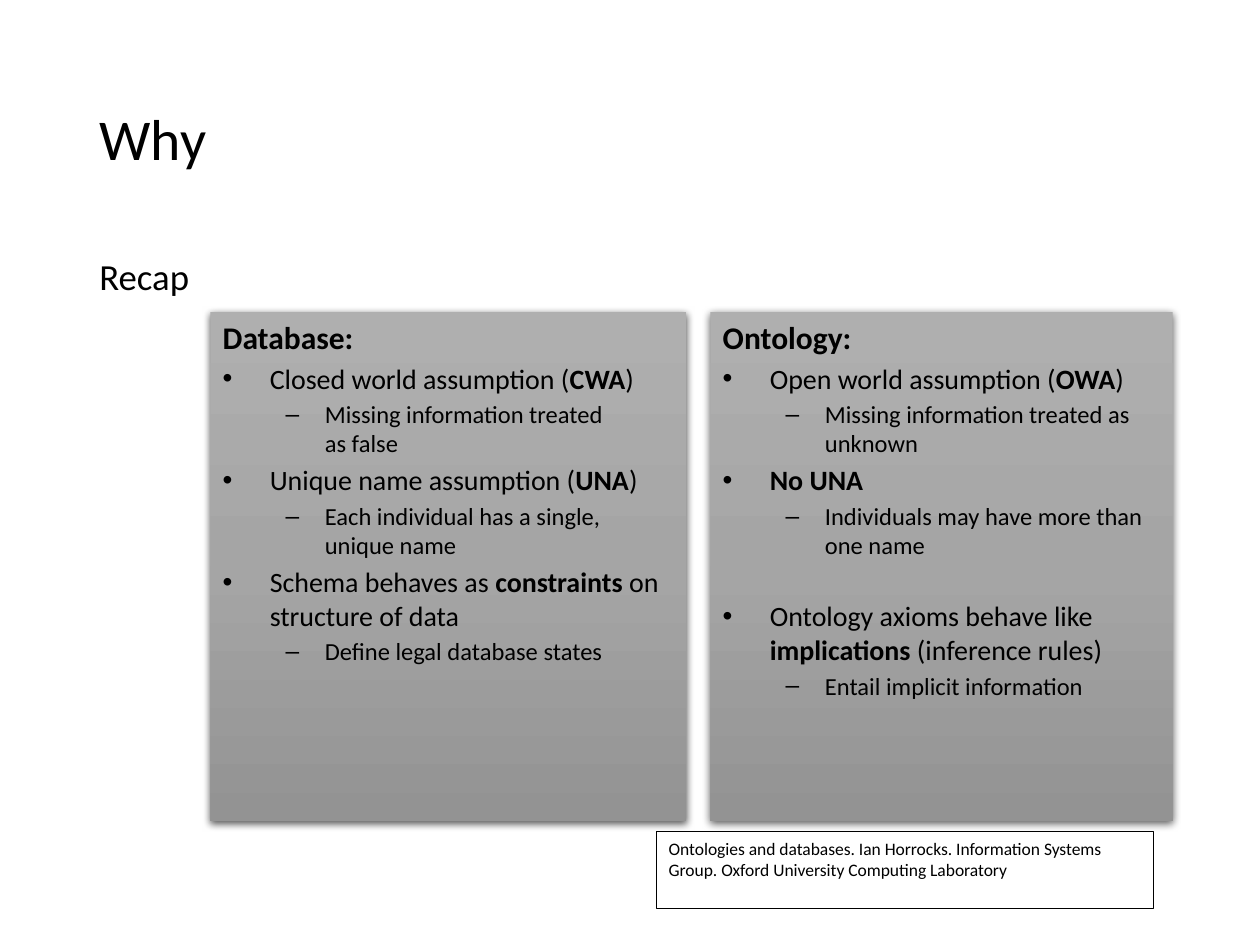
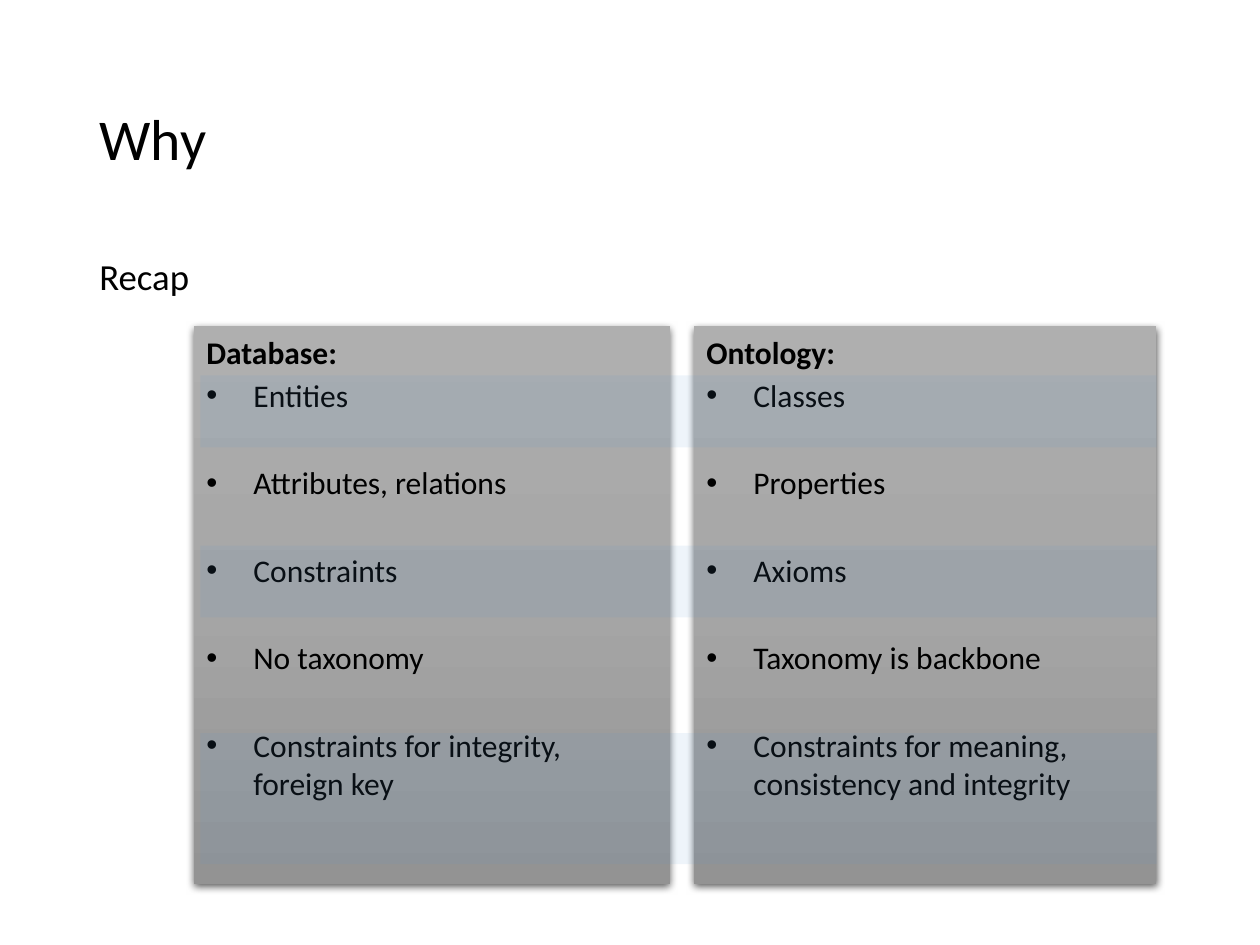
import copy

import pptx
import pptx.dml.color
import pptx.enum.dml
import pptx.enum.shapes
import pptx.enum.text
import pptx.oxml
import pptx.oxml.ns
import pptx.util
from pptx.util import Cm, Pt

COLORS = {
    "text": "000000",
    "paper": "FFFFFF",
    "panel_top": "AFAFAF",
    "panel_middle": "A5A5A5",
    "panel_bottom": "939393",
    "stripe": "5B9BD5",
}
FONT = "Calibri"
TITLE_BOX = (1.75, 1.02, 21.89, 3.68)
BODY_BOX = (1.75, 5.08, 21.89, 12.09)
PANEL_WIDTHS = (9.6, 9.32)
PANEL_GAP = 0.48
SPACING_SHARE = 0.18
LEVELS = {
    "heading": {"size": 18, "margin": 0.95, "indent": -0.95, "bullet": None, "level": 0},
    "point": {"size": 16, "margin": 0.95, "indent": -0.95, "bullet": "•", "level": 0},
    "detail": {"size": 14, "margin": 2.06, "indent": -0.79, "bullet": "–", "level": 1},
}
ASSUMPTIONS = (
    [
        ("heading", "*Database:*", 0),
        ("point", "Closed world assumption (*CWA*)", 0),
        ("detail", "Missing information treated \nas false", 0),
        ("point", "Unique name assumption (*UNA*)", 0),
        ("detail", "Each individual has a single, unique name", 0),
        ("point", "Schema behaves as *constraints* on structure of data", 0),
        ("detail", "Define legal database states", 0),
    ],
    [
        ("heading", "*Ontology:*", 0),
        ("point", "Open world assumption (*OWA*)", 0),
        ("detail", "Missing information treated as unknown", 0),
        ("point", "*No UNA*", 0),
        ("detail", "Individuals may have more than one name", 0),
        ("point", "Ontology axioms behave like *implications* (inference rules)", 19.5),
        ("detail", "Entail implicit information", 0),
    ],
)
COUNTERPARTS = {
    "Database:": ["Entities", "Attributes, relations", "Constraints", "No taxonomy",
                  "Constraints for integrity, foreign key"],
    "Ontology:": ["Classes", "Properties", "Axioms", "Taxonomy is backbone",
                  "Constraints for meaning, consistency and integrity"],
}
SOURCE_NOTE = ("Ontologies and databases. Ian Horrocks. Information Systems Group. "
               "Oxford University Computing Laboratory")
STRIPES = ((7.57, 1.45), (11, 1.45), (14.78, 2.64))


def color(name):
    return pptx.dml.color.RGBColor.from_string(COLORS[name])


def append_xml(parent, tag, **attributes):
    child = pptx.oxml.parse_xml(f'<a:{tag} {pptx.oxml.ns.nsdecls("a")}/>')
    for name, value in attributes.items():
        child.set(name, str(value))
    parent.append(child)
    return child


def format_paragraph(paragraph, **values):
    formats = {"alignment": pptx.enum.text.PP_ALIGN.LEFT, **values}
    for name, value in formats.items():
        setattr(paragraph, name, value)


def add_rich_text(paragraph, text, size):
    for part_index, part in enumerate(text.split("*")):
        for line_index, line in enumerate(part.split("\n")):
            if line_index:
                paragraph.add_line_break()
            if line:
                run = paragraph.add_run()
                run.text = line
                formats = {"name": FONT, "size": Pt(size), "bold": part_index % 2 == 1}
                for name, value in formats.items():
                    setattr(run.font, name, value)
                run.font.color.rgb = color("text")


def set_bullet(paragraph, margin=0, indent=0, bullet=None):
    properties = paragraph._p.get_or_add_pPr()
    properties.set("marL", str(Cm(margin)))
    properties.set("indent", str(Cm(indent)))
    if bullet:
        append_xml(properties, "buFont", typeface="Arial")
        append_xml(properties, "buChar", char=bullet)
    else:
        append_xml(properties, "buNone")


def fill_placeholder(placeholder, box, text, size, anchor, space_before):
    for name, value in zip(("left", "top", "width", "height"), box):
        setattr(placeholder, name, Cm(value))
    frame = placeholder.text_frame
    frame.auto_size = pptx.enum.text.MSO_AUTO_SIZE.NONE
    frame.vertical_anchor = anchor
    paragraph = frame.paragraphs[0]
    format_paragraph(paragraph, line_spacing=0.9, space_before=Pt(space_before))
    set_bullet(paragraph)
    add_rich_text(paragraph, text, size)


def add_recap_slide(presentation):
    slide = presentation.slides.add_slide(presentation.slide_layouts[1])
    anchors = pptx.enum.text.MSO_ANCHOR
    fill_placeholder(slide.shapes.title, TITLE_BOX, "Why", 33, anchors.MIDDLE, 0)
    fill_placeholder(slide.placeholders[1], BODY_BOX, "Recap", 21, anchors.TOP, 7.5)
    return slide


def add_rectangle(slide, left, top, width, height):
    shape = slide.shapes.add_shape(
        pptx.enum.shapes.MSO_SHAPE.RECTANGLE, Cm(left), Cm(top), Cm(width), Cm(height))
    shape.line.fill.background()
    shape.shadow.inherit = False
    shape.text_frame.word_wrap = True
    shape.text_frame.vertical_anchor = pptx.enum.text.MSO_ANCHOR.TOP
    return shape


def apply_panel_gradient(shape):
    shape.fill.gradient()
    shape.fill.gradient_angle = 270
    stop_list = shape._element.spPr.find(".//" + pptx.oxml.ns.qn("a:gsLst"))
    stop_list.insert(1, copy.deepcopy(stop_list[0]))
    names = ("panel_top", "panel_middle", "panel_bottom")
    for stop, position, name in zip(shape.fill.gradient_stops, (0, 0.5, 1), names):
        stop.position = position
        stop.color.rgb = color(name)


def apply_panel_shadow(shape):
    effects = shape._element.spPr.find(pptx.oxml.ns.qn("a:effectLst"))
    shadow = append_xml(effects, "outerShdw", blurRad=Pt(4.5), dist=Pt(1.5),
                        dir=5400000, algn="ctr", rotWithShape=0)
    shadow_color = append_xml(shadow, "srgbClr", val=COLORS["text"])
    append_xml(shadow_color, "alpha", val=63000)


def add_panel(slide, left, top, width, height, entries, point_size):
    panel = add_rectangle(slide, left, top, width, height)
    apply_panel_gradient(panel)
    apply_panel_shadow(panel)
    frame = panel.text_frame
    for index, (kind, text, extra_space) in enumerate(entries):
        paragraph = frame.add_paragraph() if index else frame.paragraphs[0]
        style = LEVELS[kind]
        size = point_size if kind == "point" else style["size"]
        format_paragraph(paragraph, level=style["level"],
                         space_before=Pt(size * SPACING_SHARE + extra_space))
        set_bullet(paragraph, style["margin"], style["indent"], style["bullet"])
        add_rich_text(paragraph, text, size)


def add_panel_pair(slide, left, top, height, columns, point_size):
    for width, entries in zip(PANEL_WIDTHS, columns):
        add_panel(slide, left, top, width, height, entries, point_size)
        left += width + PANEL_GAP


def add_source_note(slide):
    note = add_rectangle(slide, 13.23, 16.76, 10.01, 1.55)
    note.fill.solid()
    note.fill.fore_color.rgb = color("paper")
    note.line.color.rgb = color("text")
    note.line.width = Pt(0.25)
    paragraph = note.text_frame.paragraphs[0]
    format_paragraph(paragraph)
    add_rich_text(paragraph, SOURCE_NOTE, 10)


def add_stripe(slide, top, height):
    stripe = add_rectangle(slide, 4.04, top, 19.28, height)
    stripe.fill.solid()
    stripe.fill.fore_color.rgb = color("stripe")
    fill_color = stripe._element.spPr.find(".//" + pptx.oxml.ns.qn("a:srgbClr"))
    append_xml(fill_color, "alpha", val=10000)


def counterpart_entries(heading, points):
    entries = [("heading", f"*{heading}*", 0)]
    for index, point in enumerate(points):
        entries.append(("point", point, 25.15 if index else 0))
    return entries


def main():
    presentation = pptx.Presentation()
    presentation.slide_width = Cm(25.4)
    presentation.slide_height = Cm(19.05)

    assumptions_slide = add_recap_slide(presentation)
    add_panel_pair(assumptions_slide, 4.24, 6.29, 10.26, ASSUMPTIONS, 16)
    add_source_note(assumptions_slide)

    counterparts_slide = add_recap_slide(presentation)
    columns = [counterpart_entries(*column) for column in COUNTERPARTS.items()]
    add_panel_pair(counterparts_slide, 3.91, 6.58, 11.25, columns, 18)
    for top, height in STRIPES:
        add_stripe(counterparts_slide, top, height)

    presentation.save("out.pptx")


if __name__ == "__main__":
    main()
